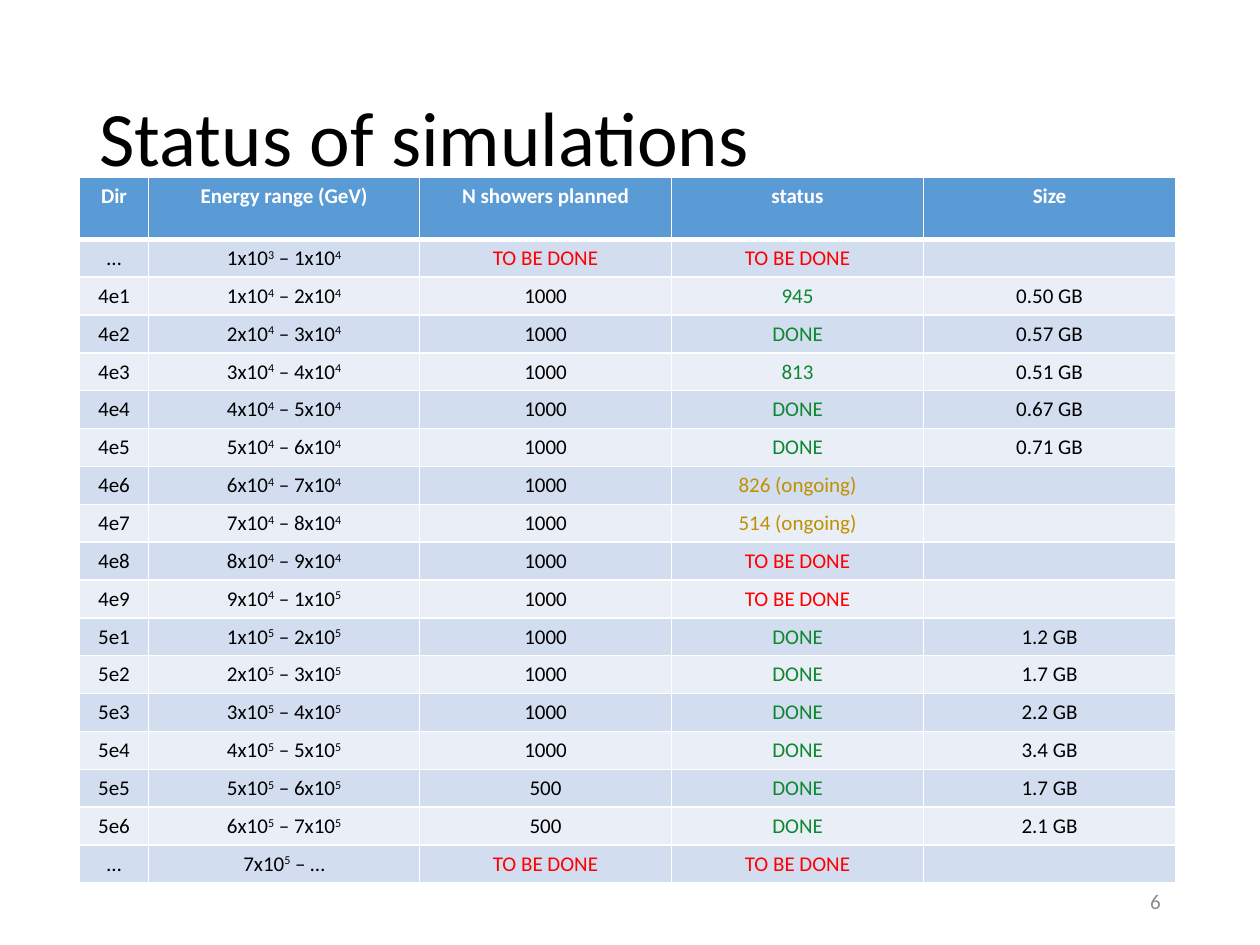
import dataclasses

import pptx
import pptx.dml.color
import pptx.enum.text
import pptx.oxml
import pptx.oxml.ns
import pptx.util

Inches = pptx.util.Inches
Pt = pptx.util.Pt
ALIGN = pptx.enum.text.PP_ALIGN
MIDDLE = pptx.enum.text.MSO_ANCHOR.MIDDLE

BLACK, WHITE, GREY = "000000", "FFFFFF", "8C8C8C"
RED, GREEN, GOLD = "FF0000", "0F8630", "BF9000"
HEADER_FILL, BAND_FILLS = "5B9BD5", ("D2DEEF", "EAEFF7")
TODO = "TO BE DONE"

HEADINGS = ("Dir", "Energy range (GeV)", "N showers planned", "status", "Size")
COLUMN_WIDTHS = (0.55, 2.15, 2, 2, 2)
HEADER_HEIGHT, ROW_HEIGHT = 0.49, 0.3


@dataclasses.dataclass
class Simulation:
    folder: str
    status: str = "DONE"
    size: str = ""
    planned: str = "1000"
    energy: str = ""

    def energy_range(self) -> str:
        """The folder name gives the range: 4e2 starts at 2x10^4."""
        if self.energy:
            return self.energy
        exponent, digit = map(int, self.folder.split("e"))
        end = f"{digit + 1}x10^{exponent}" if digit < 9 else f"1x10^{exponent + 1}"
        return f"{digit}x10^{exponent} – {end}"


SIMULATIONS = (
    Simulation("…", TODO, planned=TODO, energy="1x10^3 – 1x10^4"),
    Simulation("4e1", "945", "0.50 GB"),
    Simulation("4e2", size="0.57 GB"),
    Simulation("4e3", "813", "0.51 GB"),
    Simulation("4e4", size="0.67 GB"),
    Simulation("4e5", size="0.71 GB"),
    Simulation("4e6", "826 (ongoing)"),
    Simulation("4e7", "514 (ongoing)"),
    Simulation("4e8", TODO),
    Simulation("4e9", TODO),
    Simulation("5e1", size="1.2 GB"),
    Simulation("5e2", size="1.7 GB"),
    Simulation("5e3", size="2.2 GB"),
    Simulation("5e4", size="3.4 GB"),
    Simulation("5e5", size="1.7 GB", planned="500"),
    Simulation("5e6", size="2.1 GB", planned="500"),
    Simulation("…", TODO, planned=TODO, energy="7x10^5 – …"),
)


def rgb(color: str) -> pptx.dml.color.RGBColor:
    return pptx.dml.color.RGBColor.from_string(color)


def write(tf, text: str, *, size: float = 12, color: str = BLACK,
          bold: bool = False, align=ALIGN.CENTER) -> None:
    """Write one paragraph; the digit after each ^ is raised."""
    p = tf.paragraphs[0]
    p.alignment = align

    def add(part: str, raised: bool = False) -> None:
        if not part:
            return
        r = p.add_run()
        r.text = part
        r.font.name, r.font.size, r.font.bold = "Calibri", Pt(size), bold
        r.font.color.rgb = rgb(color)
        if raised:
            r.font._element.set("baseline", "30000")

    first, *rest = text.split("^")
    add(first)
    for part in rest:
        add(part[0], raised=True)
        add(part[1:])
    if not text:  # keeps an empty cell from growing its row
        end = pptx.oxml.parse_xml(
            f'<a:endParaRPr {pptx.oxml.ns.nsdecls("a")} sz="{size * 100}"/>')
        p._p.append(end)


def set_borders(cell, bottom: float = 1) -> None:
    tc_pr = cell._tc.get_or_add_tcPr()
    for i, (side, width) in enumerate(zip("LRTB", (1, 1, 1, bottom))):
        tc_pr.insert(i, pptx.oxml.parse_xml(
            f'<a:ln{side} {pptx.oxml.ns.nsdecls("a")} w="{Pt(width)}"><a:solidFill>'
            f'<a:srgbClr val="{WHITE}"/></a:solidFill></a:ln{side}>'))


def fill_cell(cell, text: str, fill: str, *, bottom: float = 1, **style) -> None:
    cell.fill.solid()
    cell.fill.fore_color.rgb = rgb(fill)
    set_borders(cell, bottom)
    write(cell.text_frame, text, **style)


def status_color(text: str) -> str:
    if text == TODO:
        return RED
    return GOLD if "ongoing" in text else GREEN


def add_status_table(slide) -> None:
    rows = len(SIMULATIONS) + 1
    table = slide.shapes.add_table(
        rows, len(HEADINGS), Inches(0.63), Inches(1.41),
        Inches(sum(COLUMN_WIDTHS)),
        Inches(HEADER_HEIGHT + ROW_HEIGHT * len(SIMULATIONS))).table
    for column, width in zip(table.columns, COLUMN_WIDTHS):
        column.width = Inches(width)
    for i, row in enumerate(table.rows):
        row.height = Inches(ROW_HEIGHT if i else HEADER_HEIGHT)

    for c, heading in enumerate(HEADINGS):
        fill_cell(table.cell(0, c), heading, HEADER_FILL,
                  bottom=3, color=WHITE, bold=True)
    for i, sim in enumerate(SIMULATIONS):
        texts = (sim.folder, sim.energy_range(), sim.planned, sim.status, sim.size)
        colors = (BLACK, BLACK, RED if sim.planned == TODO else BLACK,
                  status_color(sim.status), BLACK)
        for c, (text, color) in enumerate(zip(texts, colors)):
            cell = table.cell(i + 1, c)
            fill_cell(cell, text, BAND_FILLS[i % 2], color=color)
            if i == 0:  # shares the thick rule under the header
                cell._tc.tcPr.find(pptx.oxml.ns.qn("a:lnT")).set("w", str(Pt(3)))


def main() -> None:
    prs = pptx.Presentation()
    prs.slide_width, prs.slide_height = Inches(10), Inches(7.5)
    slide = prs.slides.add_slide(prs.slide_layouts[5])

    # Title
    title = slide.shapes.title
    title.left, title.top = Inches(0.69), Inches(0.4)
    title.width, title.height = Inches(8.62), Inches(1.45)
    tf = title.text_frame
    tf.auto_size = pptx.enum.text.MSO_AUTO_SIZE.NONE
    tf.vertical_anchor = MIDDLE
    write(tf, "Status of simulations", size=44, align=ALIGN.LEFT)
    tf.paragraphs[0].line_spacing = 0.9

    # Slide number
    number = slide.shapes.add_textbox(
        Inches(7.06), Inches(6.95), Inches(2.25), Inches(0.4))
    number.text_frame.word_wrap = True
    number.text_frame.vertical_anchor = MIDDLE
    write(number.text_frame, "6", color=GREY, align=ALIGN.RIGHT)

    # Simulation table
    add_status_table(slide)
    prs.save("out.pptx")


if __name__ == "__main__":
    main()
